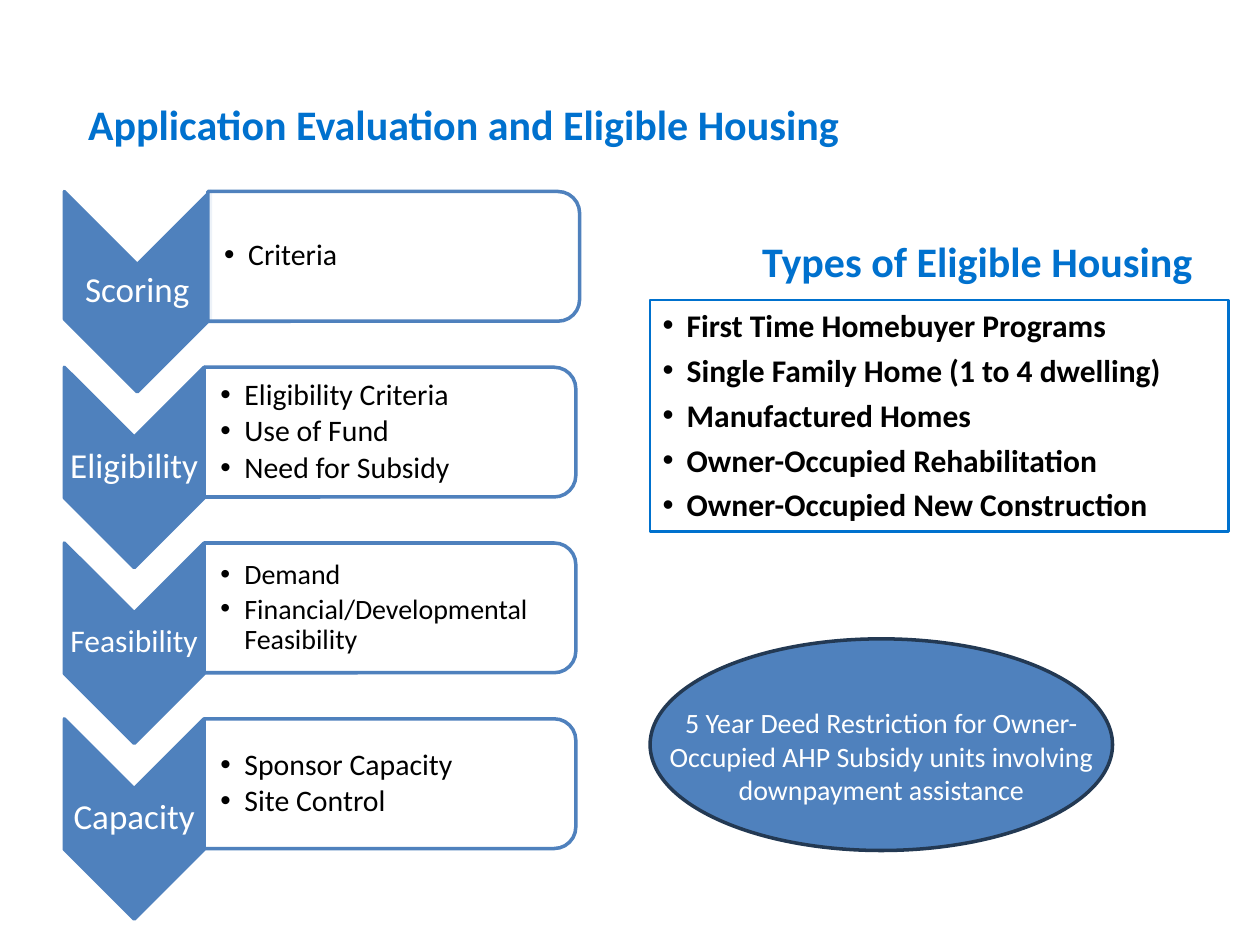
from dataclasses import dataclass

from lxml.etree import SubElement
from pptx import Presentation
from pptx.dml.color import RGBColor
from pptx.enum.shapes import MSO_SHAPE as Shape
from pptx.enum.text import MSO_ANCHOR as Anchor, MSO_AUTO_SIZE as AutoSize, PP_ALIGN as Align
from pptx.oxml.ns import qn
from pptx.util import Inches, Pt

BLUE = RGBColor(0x4F, 0x81, 0xBD)
HEADING_BLUE = RGBColor(0x00, 0x71, 0xCE)
NAVY = RGBColor(0x23, 0x39, 0x53)
WHITE = RGBColor(0xFF, 0xFF, 0xFF)
BLACK = RGBColor(0x00, 0x00, 0x00)
FONT = "Calibri"

STEP_LEFT = 0.51
STEP_TOP = 1.52
STEP_PITCH = 1.395
CHEVRON_HEIGHT = 1.59
PANEL_WIDTH, PANEL_HEIGHT = 2.95, 1.03


@dataclass
class Step:
    label: str
    items: list[str]
    label_size: int = 20
    item_size: int = 17
    chevron_width: float = 1.11
    panel_left: float = 1.62


STEPS = [
    Step("Scoring", ["Criteria"], chevron_width=1.16, panel_left=1.65),
    Step("Eligibility", ["Eligibility Criteria", "Use of Fund", "Need for Subsidy"]),
    Step("Feasibility", ["Demand", "Financial/Developmental Feasibility"], 18, 16),
    Step("Capacity", ["Sponsor Capacity", "Site Control"]),
]
HOUSING_TYPES = [
    "First Time Homebuyer Programs",
    "Single Family Home (1 to 4 dwelling)",
    "Manufactured Homes",
    "Owner-Occupied Rehabilitation",
    "Owner-Occupied New Construction",
]


def place(shape, left: float, top: float, width: float, height: float) -> None:
    shape.left, shape.top = Inches(left), Inches(top)
    shape.width, shape.height = Inches(width), Inches(height)


def add_bullet(paragraph) -> None:
    properties = paragraph._p.get_or_add_pPr()
    properties.set("marL", str(Inches(0.19)))
    properties.set("indent", str(-Inches(0.19)))
    SubElement(properties, qn("a:buFont"), typeface="Arial")
    SubElement(properties, qn("a:buChar"), char="•")


def write(shape, lines: list[str], size: int, color: RGBColor, *, bold: bool = False,
          align: Align = Align.LEFT, anchor: Anchor = Anchor.TOP, bullets: bool = False,
          line_spacing: float = 1.0, space_after: float = 0) -> None:
    frame = shape.text_frame
    frame.text = "\n".join(lines)
    frame.word_wrap = True
    frame.auto_size = AutoSize.NONE
    frame.vertical_anchor = anchor
    for paragraph in frame.paragraphs:
        if bullets:
            add_bullet(paragraph)
        paragraph.alignment = align
        paragraph.line_spacing = line_spacing
        paragraph.space_before = Pt(0)
        paragraph.space_after = Pt(space_after)
        for run in paragraph.runs:
            run.font.name, run.font.size = FONT, Pt(size)
            run.font.bold, run.font.color.rgb = bold, color


def add_text_box(slide, left: float, top: float, width: float, height: float):
    return slide.shapes.add_textbox(Inches(left), Inches(top), Inches(width), Inches(height))


def set_tight_margins(shape, left: float) -> None:
    frame = shape.text_frame
    frame.margin_left = Inches(left)
    frame.margin_top = frame.margin_right = frame.margin_bottom = Inches(0.01)


def add_outlined(slide, kind: Shape, left: float, top: float, width: float, height: float,
                 fill: RGBColor, line: RGBColor):
    shape = slide.shapes.add_shape(kind, Inches(left), Inches(top), Inches(width), Inches(height))
    shape.shadow.inherit = False
    shape.fill.solid()
    shape.fill.fore_color.rgb = fill
    shape.line.color.rgb = line
    shape.line.width = Pt(2)
    return shape


def add_turned(slide, kind: Shape, left: float, top: float, width: float, height: float,
               fill: RGBColor):
    """Add a shape turned by 90 degrees that covers the given area."""
    shift = (width - height) / 2
    shape = add_outlined(slide, kind, left + shift, top - shift, height, width, fill, BLUE)
    shape.rotation = 90
    return shape


def add_step(slide, step: Step, top: float) -> None:
    add_turned(slide, Shape.CHEVRON, STEP_LEFT, top, step.chevron_width, CHEVRON_HEIGHT, BLUE)
    label = add_text_box(slide, STEP_LEFT, top + 0.55, step.chevron_width, 0.48)
    set_tight_margins(label, 0.01)
    write(label, [step.label], step.label_size, WHITE, align=Align.CENTER,
          anchor=Anchor.MIDDLE, line_spacing=0.9)

    panel = add_turned(slide, Shape.ROUND_2_SAME_RECTANGLE, step.panel_left, top,
                       PANEL_WIDTH, PANEL_HEIGHT, WHITE)
    color = panel.fill._xPr.find(f"{qn('a:solidFill')}/{qn('a:srgbClr')}")
    SubElement(color, qn("a:alpha"), val="90000")
    items = add_text_box(slide, step.panel_left, top + 0.05, 2.9, 0.93)
    set_tight_margins(items, 0.13)
    write(items, step.items, step.item_size, BLACK, anchor=Anchor.MIDDLE, bullets=True,
          line_spacing=0.9, space_after=2.5)


def main() -> None:
    presentation = Presentation()
    presentation.slide_width, presentation.slide_height = Inches(10), Inches(7.5)
    slide = presentation.slides.add_slide(presentation.slide_layouts[1])

    # Title
    title = slide.shapes.title
    place(title, 0.6, 0.63, 8.19, 0.7)
    write(title, ["Application Evaluation and Eligible Housing"], 24, HEADING_BLUE,
          bold=True, anchor=Anchor.MIDDLE)

    # Evaluation steps
    for index, step in enumerate(STEPS):
        add_step(slide, step, STEP_TOP + index * STEP_PITCH)

    # Eligible housing list
    housing = slide.placeholders[1]
    place(housing, 5.16, 2.38, 4.59, 1.84)
    housing.line.color.rgb = HEADING_BLUE
    housing.line.width = Pt(1.5)
    write(housing, HOUSING_TYPES, 18, BLACK, bold=True, bullets=True, space_after=4)
    heading = add_text_box(slide, 5.95, 1.82, 4, 0.5)
    write(heading, ["Types of Eligible Housing"], 24, HEADING_BLUE, bold=True)

    # Deed restriction
    add_outlined(slide, Shape.OVAL, 5.16, 5.07, 3.67, 1.68, BLUE, NAVY)
    restriction = add_text_box(slide, 5.1, 5.55, 3.79, 0.91)
    write(restriction, ["5 Year Deed Restriction for Owner-Occupied AHP Subsidy units "
                        "involving downpayment assistance"], 16, WHITE, align=Align.CENTER)

    presentation.save("out.pptx")


if __name__ == "__main__":
    main()
